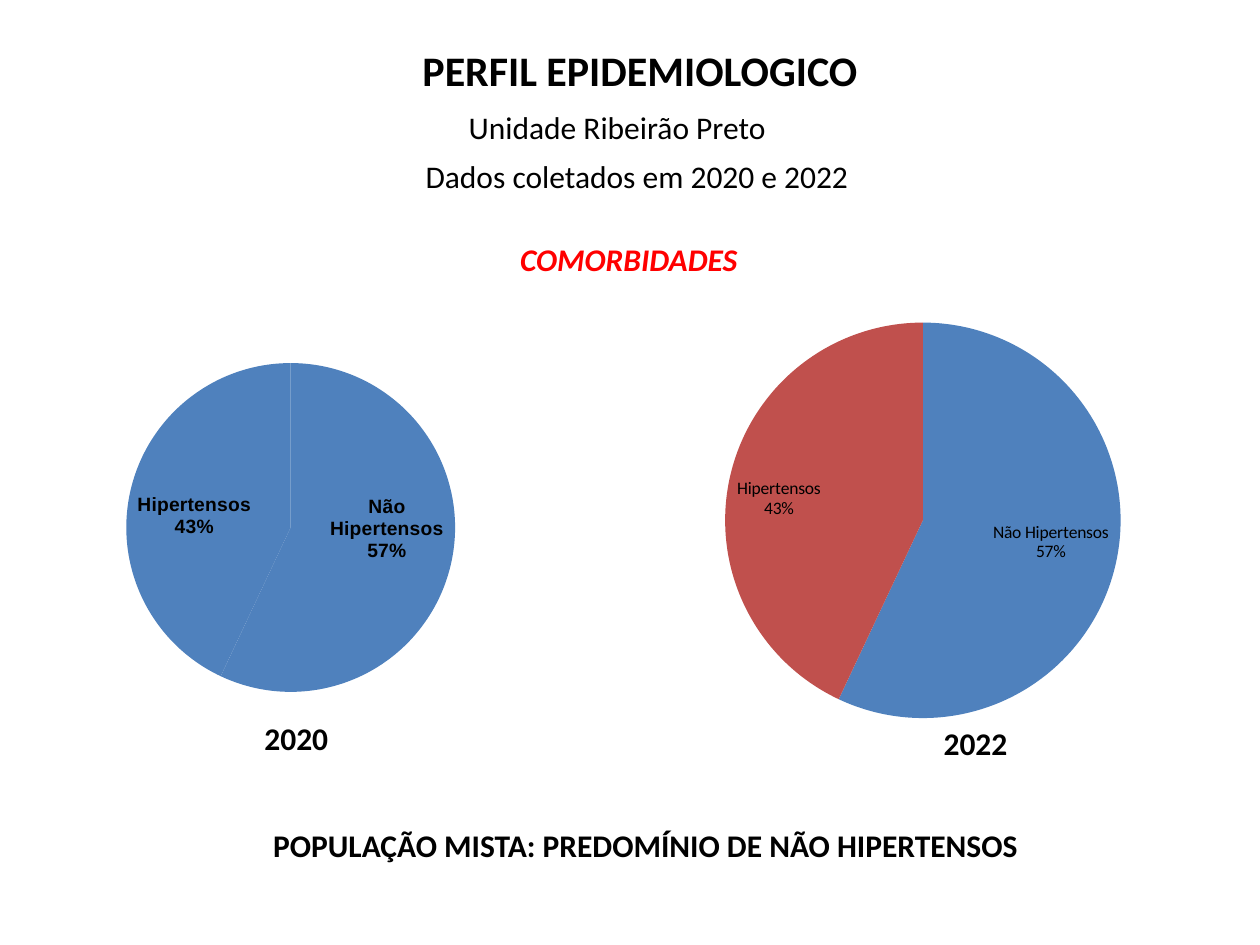
from lxml.etree import SubElement
from pptx import Presentation
from pptx.chart.data import CategoryChartData
from pptx.dml.color import RGBColor
from pptx.enum.chart import XL_CHART_TYPE as CT, XL_LABEL_POSITION as LP
from pptx.enum.text import MSO_ANCHOR, MSO_AUTO_SIZE, PP_ALIGN
from pptx.oxml.ns import qn
from pptx.util import Pt

BLACK = RGBColor(0, 0, 0)
RED = RGBColor(0xFF, 0, 0)
BLUE = RGBColor(0x4F, 0x81, 0xBD)
BRICK = RGBColor(0xC0, 0x50, 0x4D)
FONT = "Calibri"
LINE_H = 28.8


def style(font, size, color=BLACK, bold=False, italic=False, name=FONT):
    """Set the look of a font."""
    font.name, font.size = name, Pt(size)
    font.bold, font.italic = bold, italic
    font.color.rgb = color


def add_line(s, left, top, width, text, **look):
    """Add a one-line text box that does not wrap."""
    sp = s.shapes.add_textbox(Pt(left), Pt(top), Pt(width), Pt(LINE_H))
    tf = sp.text_frame
    tf.word_wrap = False
    tf.auto_size = MSO_AUTO_SIZE.SHAPE_TO_FIT_TEXT
    r = tf.paragraphs[0].add_run()
    r.text = text
    style(r.font, 18, **look)


def add_header(s, left, top, width):
    """Place the title, its two sublines and the topic heading."""
    sp = s.shapes.title
    sp.left, sp.top, sp.width, sp.height = Pt(left), Pt(top), Pt(width), Pt(36)
    tf = sp.text_frame
    tf.word_wrap = True
    tf.auto_size = MSO_AUTO_SIZE.NONE
    tf.vertical_anchor = MSO_ANCHOR.TOP
    p = tf.paragraphs[0]
    p.alignment = PP_ALIGN.CENTER
    r = p.add_run()
    r.text = "PERFIL EPIDEMIOLOGICO"
    style(r.font, 24, bold=True)
    add_line(s, left + 112.4, top + 36.7, 186.5, "Unidade Ribeirão Preto")
    add_line(s, left + 87.8, top + 64.8, 259.2, "Dados coletados em 2020 e 2022")
    add_line(s, left + 141.8, top + 112.3, 141.1, "COMORBIDADES",
             color=RED, bold=True, italic=True)


def set_plot_box(chart, box):
    """Fix the inner plot area as fractions of the chart."""
    area = chart.plots[0]._element.getparent()
    for old in area.findall(qn("c:layout")):
        area.remove(old)
    layout = SubElement(area, qn("c:layout"))
    area.insert(0, layout)
    manual = SubElement(layout, qn("c:manualLayout"))
    settings = [("layoutTarget", "inner"), ("xMode", "edge"), ("yMode", "edge")]
    for tag, val in settings + list(zip("xywh", box)):
        SubElement(manual, qn(f"c:{tag}")).set("val", str(val))


def add_pie(s, left, top, width, height, plot_box, colors, label_look, year, year_at):
    """Place a pie with slice labels and its year below."""
    data = CategoryChartData()
    data.categories = ["Não Hipertensos", "Hipertensos"]
    data.add_series("Series 1", (57, 43))
    chart = s.shapes.add_chart(
        CT.PIE, Pt(left), Pt(top), Pt(width), Pt(height), data).chart
    chart.has_title = chart.has_legend = False
    style(chart.font, 10)
    set_plot_box(chart, plot_box)
    plot = chart.plots[0]
    plot.vary_by_categories = True
    for i, color in enumerate(colors):
        fill = plot.series[0].points[i].format.fill
        fill.solid()
        fill.fore_color.rgb = color
    plot.has_data_labels = True
    labels = plot.data_labels
    labels.show_category_name = labels.show_percentage = True
    labels.show_value = False
    labels.number_format, labels.number_format_is_linked = "0%", False
    labels.position = LP.INSIDE_END
    style(labels.font, **label_look)
    dx, dy = year_at
    add_line(s, left + dx, top + dy, 51.1, year, bold=True)


def main():
    """Build the slide and save it."""
    prs = Presentation()
    prs.slide_width, prs.slide_height = Pt(720), Pt(540)
    s = prs.slides.add_slide(prs.slide_layouts[5])
    add_header(s, 148.3, 21.6, 434.9)
    add_pie(s, -3.6, 190, 360, 216, (0.013, 0.081, 0.917, 0.87), (BLUE, BLUE),
            {"size": 11, "bold": True, "name": "Arial"}, "2020", (147.6, 217.5))
    add_pie(s, 369.4, 175.7, 342.7, 234.7, (0, 0.037, 0.922, 0.963), (BLUE, BRICK),
            {"size": 10}, "2022", (162.7, 234.7))
    add_line(s, 149, 468.7, 439.9,
             "POPULAÇÃO MISTA: PREDOMÍNIO DE NÃO HIPERTENSOS", bold=True)
    prs.save("out.pptx")


if __name__ == "__main__":
    main()
